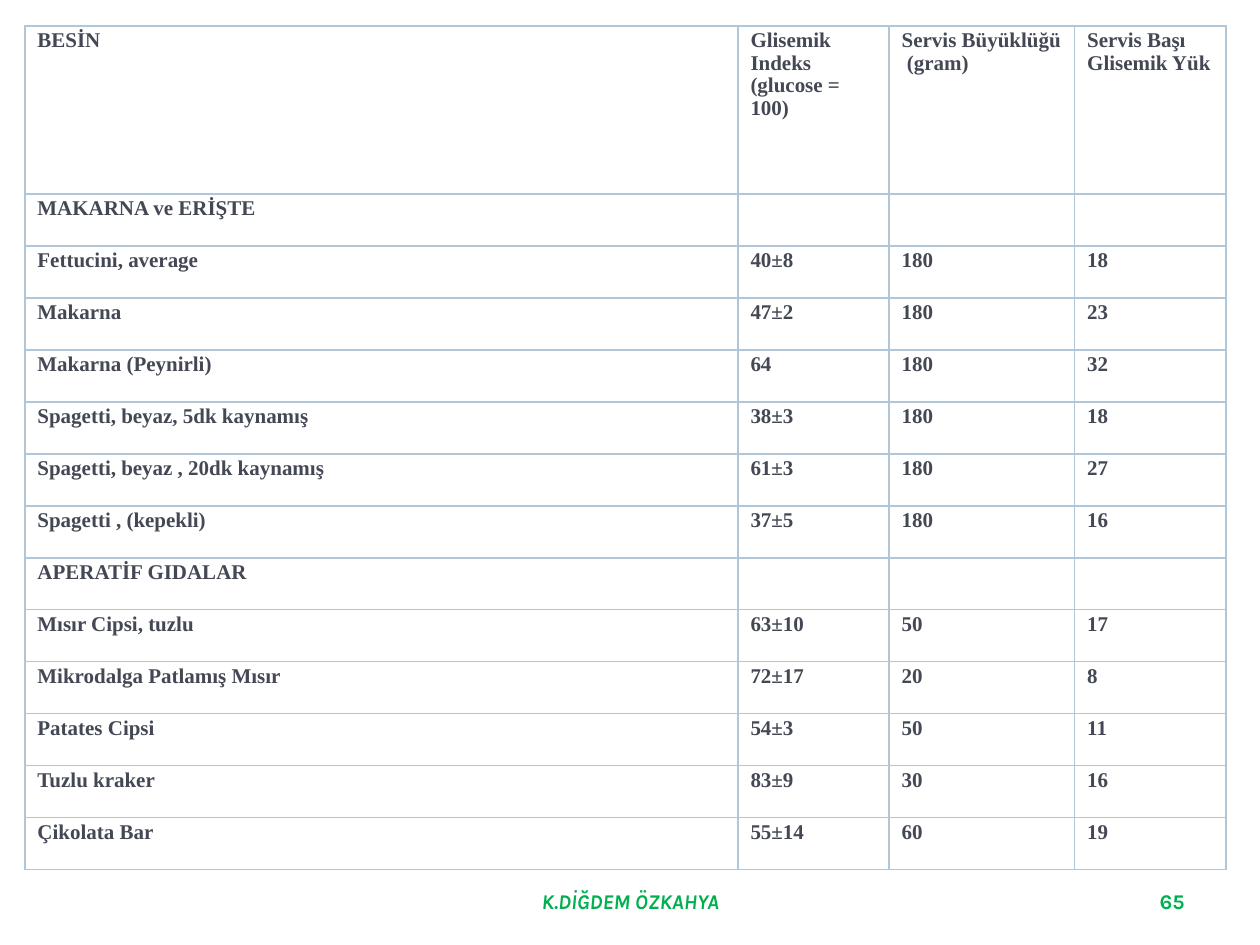
"""Build a slide with a glycemic index table for pasta and snacks."""
from lxml import etree
from pptx import Presentation
from pptx.dml.color import RGBColor
from pptx.enum.text import MSO_ANCHOR, PP_ALIGN
from pptx.oxml import parse_xml
from pptx.util import Pt

LEFT, CENTER, RIGHT = PP_ALIGN.LEFT, PP_ALIGN.CENTER, PP_ALIGN.RIGHT
MIDDLE = MSO_ANCHOR.MIDDLE
NS = "http://schemas.openxmlformats.org/drawingml/2006/main"
INK, GREEN, WHITE, BORDER = "434854", "00B050", "FFFFFF", "B0C6D9"


def write(tf, text, font="Times New Roman", color=INK, italic=False, align=LEFT, spacing=None):
    p = tf.paragraphs[0]
    p.text = text
    p.alignment = align
    p.line_spacing = spacing
    for r in p.runs:
        r.font.name = font
        r.font.size = Pt(12)
        r.font.bold = True
        r.font.italic = italic
        r.font.color.rgb = RGBColor.from_string(color)


def set_borders(cell, color):
    tcPr = cell._tc.get_or_add_tcPr()
    for i, side in enumerate(("lnL", "lnR", "lnT", "lnB")):
        ln = parse_xml(f'<a:{side} xmlns:a="{NS}" w="12700"/>')
        fill = etree.SubElement(ln, f"{{{NS}}}solidFill")
        etree.SubElement(fill, f"{{{NS}}}srgbClr", val=color)
        tcPr.insert(i, ln)


prs = Presentation()
prs.slide_width, prs.slide_height = Pt(720), Pt(540)
s = prs.slides.add_slide(prs.slide_layouts[6])

footers = [
    ("K.DİĞDEM ÖZKAHYA", 246.2, 228.2, CENTER, True),
    ("65", 516.2, 167.8, RIGHT, False),
]
for text, left, width, align, italic in footers:
    tf = s.shapes.add_textbox(Pt(left), Pt(500.4), Pt(width), Pt(28.8)).text_frame
    tf.word_wrap = True
    tf.vertical_anchor = MIDDLE
    write(tf, text, font="Karla", color=GREEN, italic=italic, align=align)

rows = [
    ("BESİN", "Glisemik Indeks\n(glucose = 100)", "Servis Büyüklüğü  (gram)", "Servis Başı Glisemik Yük"),
    ("MAKARNA ve ERİŞTE", "", "", ""),
    ("Fettucini, average", "40±8", "180", "18"),
    ("Makarna", "47±2", "180", "23"),
    ("Makarna (Peynirli)", "64", "180", "32"),
    ("Spagetti, beyaz, 5dk kaynamış", "38±3", "180", "18"),
    ("Spagetti, beyaz , 20dk kaynamış", "61±3", "180", "27"),
    ("Spagetti , (kepekli)", "37±5", "180", "16"),
    ("APERATİF GIDALAR", "", "", ""),
    ("Mısır Cipsi, tuzlu", "63±10", "50", "17"),
    ("Mikrodalga Patlamış Mısır", "72±17", "20", "8"),
    ("Patates Cipsi", "54±3", "50", "11"),
    ("Tuzlu kraker", "83±9", "30", "16"),
    ("Çikolata Bar", "55±14", "60", "19"),
]
col_widths = [407.5, 86.4, 106, 86.4]
row_heights = [96] + [29.7] * (len(rows) - 1)
table = s.shapes.add_table(
    len(rows), len(col_widths), Pt(14.2), Pt(15), Pt(sum(col_widths)), Pt(sum(row_heights))
).table
table.first_row = table.horz_banding = False
for col, width in zip(table.columns, col_widths):
    col.width = Pt(width)
for row, height, values in zip(table.rows, row_heights, rows):
    row.height = Pt(height)
    for cell, text in zip(row.cells, values):
        cell.margin_left = cell.margin_right = Pt(7.2)
        cell.margin_top = cell.margin_bottom = Pt(2.2)
        cell.fill.solid()
        cell.fill.fore_color.rgb = RGBColor.from_string(WHITE)
        set_borders(cell, BORDER)
        write(cell.text_frame, text, spacing=Pt(12.8))

prs.save("out.pptx")
